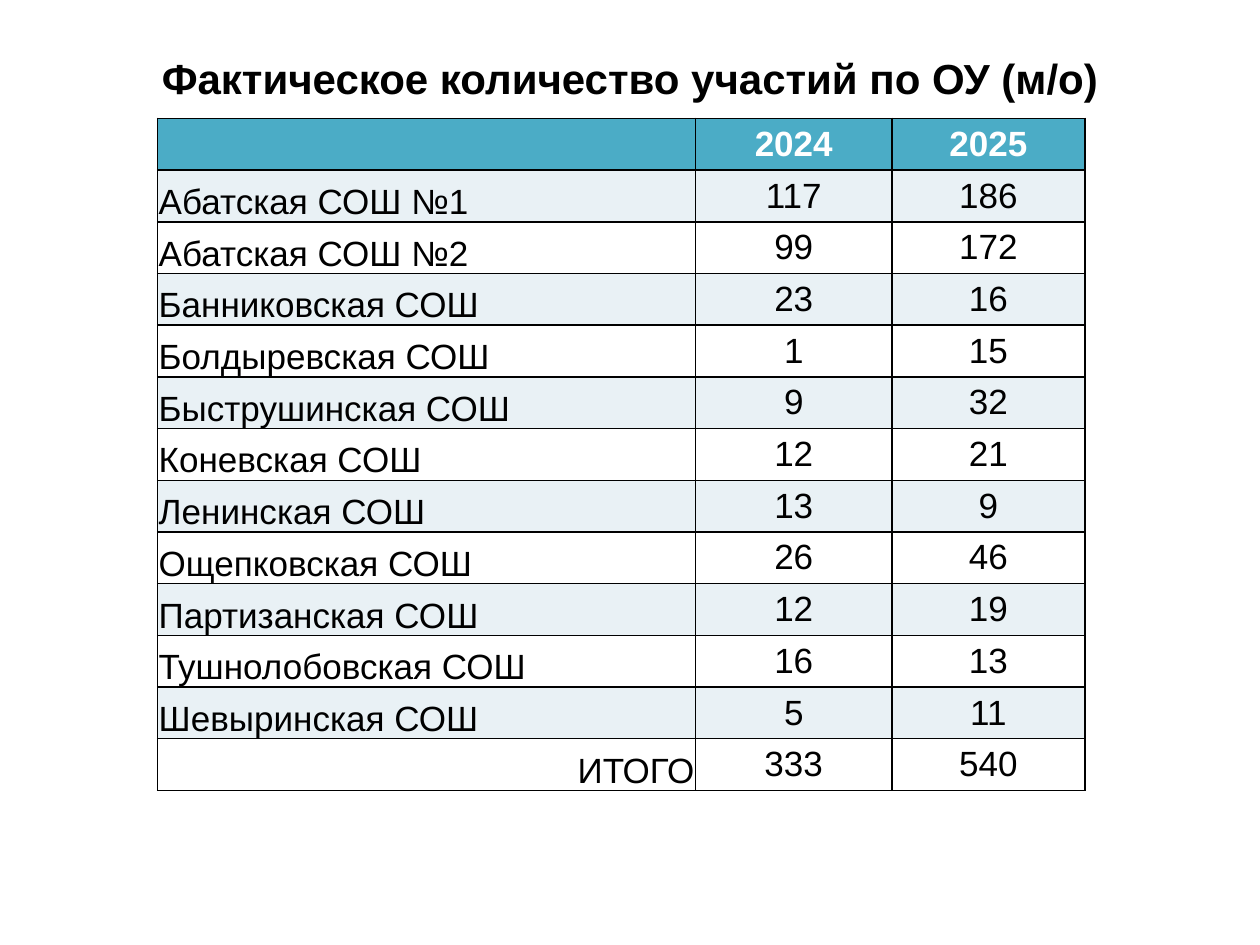
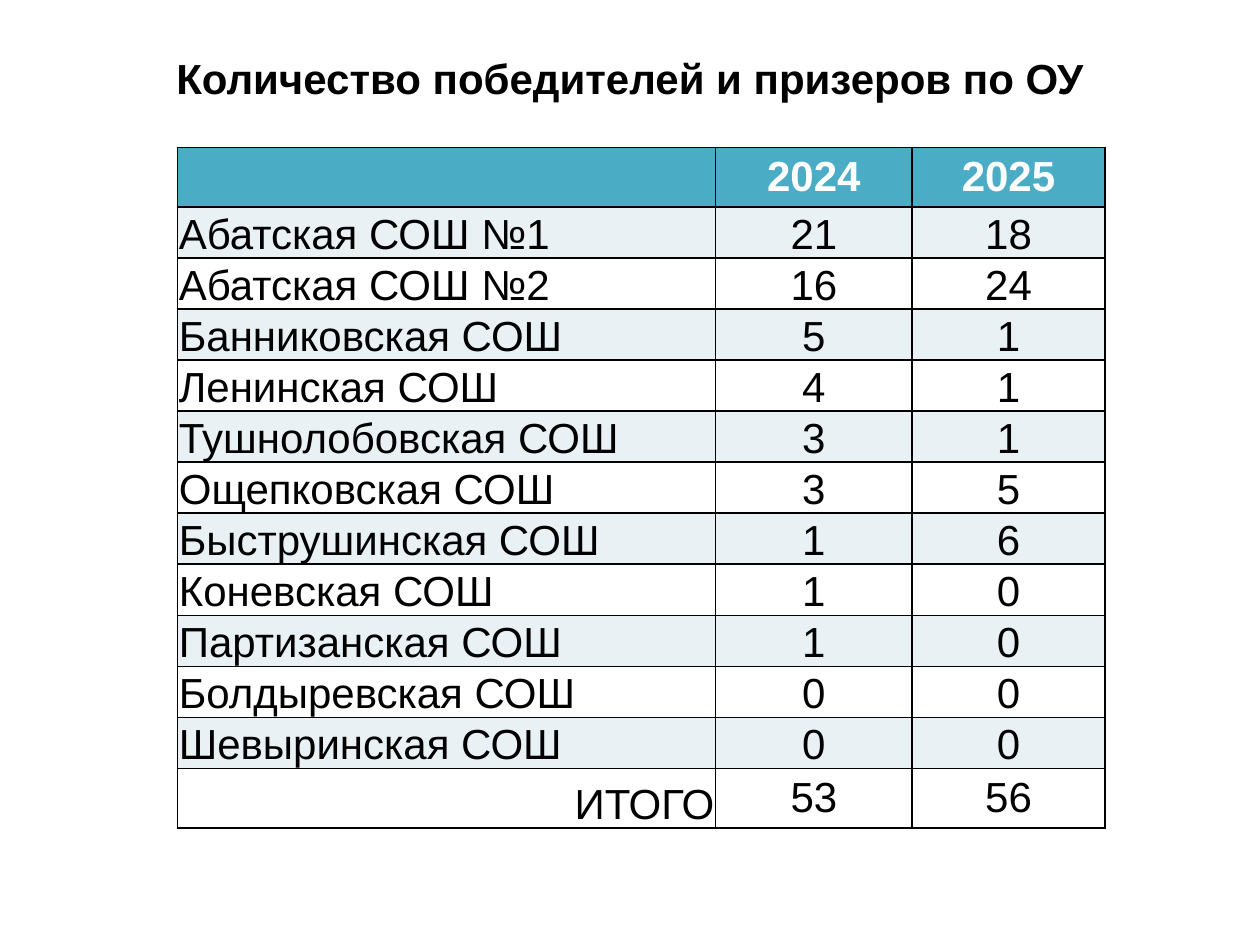
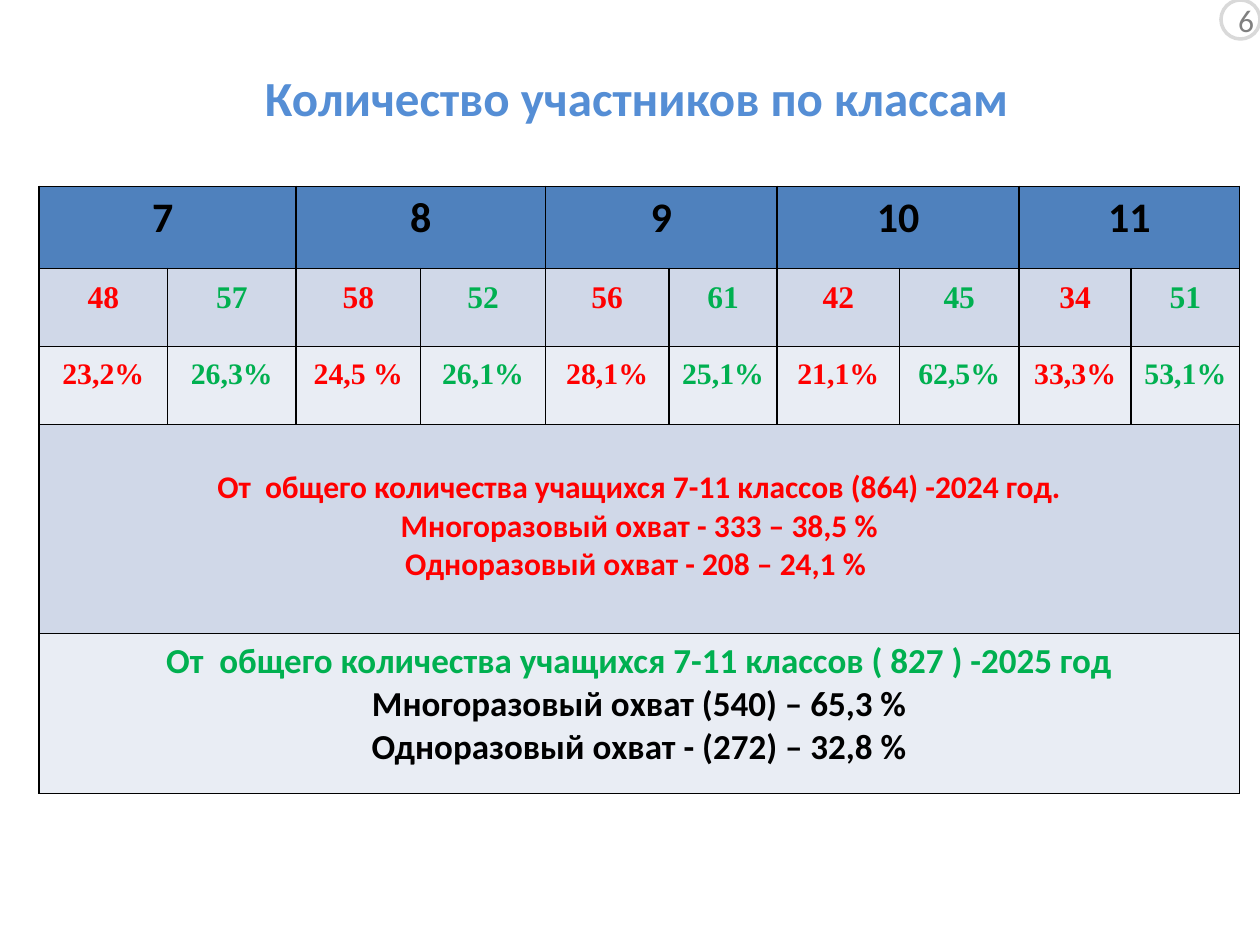
"""Builds three slides of tables on school olympiad participation in 2024 and 2025."""
from lxml import etree
from pptx import Presentation
from pptx.dml.color import RGBColor
from pptx.enum.shapes import MSO_SHAPE
from pptx.enum.text import MSO_ANCHOR, MSO_AUTO_SIZE, PP_ALIGN
from pptx.oxml.ns import qn
from pptx.util import Inches, Pt

LEFT, CENTER, RIGHT = PP_ALIGN.LEFT, PP_ALIGN.CENTER, PP_ALIGN.RIGHT
MIDDLE, BOTTOM = MSO_ANCHOR.MIDDLE, MSO_ANCHOR.BOTTOM
NO_AUTOFIT = MSO_AUTO_SIZE.NONE
OVAL = MSO_SHAPE.OVAL

BLACK = RGBColor(0x00, 0x00, 0x00)
WHITE = RGBColor(0xFF, 0xFF, 0xFF)
TEAL = RGBColor(0x4B, 0xAC, 0xC6)
PALE_TEAL = RGBColor(0xE9, 0xF1, 0xF5)
BLUE = RGBColor(0x4F, 0x81, 0xBD)
TITLE_BLUE = RGBColor(0x55, 0x8E, 0xD5)
BAND_BLUE = RGBColor(0xD0, 0xD8, 0xE8)
PALE_BLUE = RGBColor(0xE9, 0xED, 0xF4)
RED = RGBColor(0xFF, 0x00, 0x00)
GREEN = RGBColor(0x00, 0xB0, 0x50)
GRAY = RGBColor(0x80, 0x80, 0x80)
LIGHT_GRAY = RGBColor(0xD9, 0xD9, 0xD9)


def write_text(paragraph, text, size, font_name, color, bold=True, alignment=CENTER):
    paragraph.alignment = alignment
    run = paragraph.add_run()
    run.text = text
    run.font.size = Pt(size)
    run.font.name = font_name
    run.font.color.rgb = color
    run.font.bold = bold


def style_cell(cell, fill_color):
    properties = cell._tc.get_or_add_tcPr()
    for side in ("a:lnL", "a:lnR", "a:lnT", "a:lnB"):
        border = etree.SubElement(properties, qn(side), w=str(Pt(1)))
        border_fill = etree.SubElement(border, qn("a:solidFill"))
        etree.SubElement(border_fill, qn("a:srgbClr"), val=str(BLACK))
    cell.fill.solid()
    cell.fill.fore_color.rgb = fill_color


presentation = Presentation()
presentation.slide_width = Inches(10)
presentation.slide_height = Inches(7.5)

titles = [
    ("Фактическое количество участий по ОУ (м/о)", 0.5, 0.3, 0.64, 24, "Arial", BLACK),
    ("Количество победителей и призеров по ОУ", 0.5, 0.3, 0.64, 24, "Arial", BLACK),
    ("Количество участников по классам", 0.55, 0.62, 0.3, 28, "Calibri", TITLE_BLUE),
]
for text, left, top, height, size, font_name, color in titles:
    slide = presentation.slides.add_slide(presentation.slide_layouts[5])
    title = slide.shapes.title
    title.left, title.top = Inches(left), Inches(top)
    title.width, title.height = Inches(9), Inches(height)
    title.text_frame.auto_size = NO_AUTOFIT
    title.text_frame.vertical_anchor = MIDDLE
    write_text(title.text_frame.paragraphs[0], text, size, font_name, color)

participations = [
    ("", "2024", "2025"),
    ("Абатская СОШ №1", "117", "186"),
    ("Абатская СОШ №2", "99", "172"),
    ("Банниковская СОШ", "23", "16"),
    ("Болдыревская СОШ", "1", "15"),
    ("Быструшинская СОШ", "9", "32"),
    ("Коневская СОШ", "12", "21"),
    ("Ленинская СОШ", "13", "9"),
    ("Ощепковская СОШ", "26", "46"),
    ("Партизанская СОШ", "12", "19"),
    ("Тушнолобовская СОШ", "16", "13"),
    ("Шевыринская СОШ", "5", "11"),
    ("ИТОГО", "333", "540"),
]
winners = [
    ("", "2024", "2025"),
    ("Абатская СОШ №1", "21", "18"),
    ("Абатская СОШ №2", "16", "24"),
    ("Банниковская СОШ", "5", "1"),
    ("Ленинская СОШ", "4", "1"),
    ("Тушнолобовская СОШ", "3", "1"),
    ("Ощепковская СОШ", "3", "5"),
    ("Быструшинская СОШ", "1", "6"),
    ("Коневская СОШ", "1", "0"),
    ("Партизанская СОШ", "1", "0"),
    ("Болдыревская СОШ", "0", "0"),
    ("Шевыринская СОШ", "0", "0"),
    ("ИТОГО", "53", "56"),
]
school_tables = [
    (participations, 1.25, 0.94, 5.33, 0.41, 20, False),
    (winners, 1.41, 1.17, 5.4, 0.47, 24, True),
]
for slide, school_table in zip(presentation.slides, school_tables):
    rows, left, top, height, outer_height, size, tight_numbers = school_table
    last_row = len(rows) - 1
    inner_height = (height - 2 * outer_height) / (last_row - 1)
    table = slide.shapes.add_table(
        len(rows), 3, Inches(left), Inches(top), Inches(7.36), Inches(height)
    ).table
    for column, width in zip(table.columns, (4.27, 1.56, 1.53)):
        column.width = Inches(width)
    for row_index, row in enumerate(rows):
        is_header, is_total = row_index == 0, row_index == last_row
        table.rows[row_index].height = Inches(outer_height if is_header or is_total else inner_height)
        band_color = PALE_TEAL if row_index % 2 else WHITE
        for column_index, text in enumerate(row):
            cell = table.cell(row_index, column_index)
            style_cell(cell, TEAL if is_header else band_color)
            is_name = column_index == 0
            if not is_header and (is_name or tight_numbers and not is_total):
                cell.vertical_anchor = BOTTOM
                cell.margin_left = cell.margin_right = cell.margin_top = Inches(0.01)
                cell.margin_bottom = 0
            name_alignment = RIGHT if is_total else LEFT
            if text:
                write_text(cell.text_frame.paragraphs[0], text, size, "Arial",
                           WHITE if is_header else BLACK, is_header,
                           name_alignment if is_name else CENTER)

slide = presentation.slides[2]
column_widths = (1.02, 1.02, 0.99, 0.99, 0.98, 0.86, 0.97, 0.95, 0.89, 0.86)
row_heights = (0.65, 0.62, 0.62, 1.66, 1.27)
row_colors = (BLUE, BAND_BLUE, PALE_BLUE, BAND_BLUE, PALE_BLUE)
table = slide.shapes.add_table(
    len(row_heights), len(column_widths), Inches(0.31), Inches(1.48),
    Inches(sum(column_widths)), Inches(sum(row_heights))
).table
for column, width in zip(table.columns, column_widths):
    column.width = Inches(width)
for row, height, fill_color in zip(table.rows, row_heights, row_colors):
    row.height = Inches(height)
    for cell in row.cells:
        style_cell(cell, fill_color)

for grade_index, grade in enumerate(("7 ", "8", "9", "10", "11")):
    first_column = 2 * grade_index
    cell = table.cell(0, first_column)
    cell.merge(table.cell(0, first_column + 1))
    write_text(cell.text_frame.paragraphs[0], grade, 24, "Calibri", BLACK)

grade_rows = [
    (18, ("48", "57", "58", "52", "56", "61", "42", "45", "34", "51")),
    (17, ("23,2%", "26,3%", "24,5 %", "26,1%", "28,1%",
          "25,1%", "21,1%", "62,5%", "33,3%", "53,1%")),
]
for row_index, (size, values) in enumerate(grade_rows, start=1):
    for column_index, value in enumerate(values):
        paragraph = table.cell(row_index, column_index).text_frame.paragraphs[0]
        paragraph.line_spacing = 1.15
        write_text(paragraph, value, size, "Times New Roman", GREEN if column_index % 2 else RED)

summaries = [
    (18, 0.35, [
        ("От  общего количества учащихся 7-11 классов (864) -2024 год.", RED),
        ("Многоразовый охват - 333 – 38,5 %", RED),
        ("Одноразовый охват - 208 – 24,1 % ", RED),
    ]),
    (20, 0.05, [
        ("От  общего количества учащихся 7-11 классов ( 827 ) -2025 год", GREEN),
        ("Многоразовый охват (540) – 65,3 %", BLACK),
        ("Одноразовый охват - (272) – 32,8 %", BLACK),
    ]),
]
for row_index, (size, top_margin, lines) in enumerate(summaries, start=3):
    cell = table.cell(row_index, 0)
    cell.merge(table.cell(row_index, len(column_widths) - 1))
    cell.margin_top = Inches(top_margin)
    for line_index, (text, color) in enumerate(lines):
        text_frame = cell.text_frame
        paragraph = text_frame.add_paragraph() if line_index else text_frame.paragraphs[0]
        write_text(paragraph, text, size, "Calibri", color)

page_badge = slide.shapes.add_shape(OVAL, Inches(9.69), 0, Inches(0.31), Inches(0.31))
page_badge.shadow.inherit = False
page_badge.fill.background()
page_badge.line.color.rgb = LIGHT_GRAY
page_badge.line.width = Pt(2)
text_frame = page_badge.text_frame
text_frame.word_wrap = False
text_frame.vertical_anchor = MIDDLE
text_frame.margin_left = Inches(0.09)
text_frame.margin_right = text_frame.margin_top = text_frame.margin_bottom = 0
write_text(text_frame.paragraphs[0], "6", 18, "Calibri", GRAY, bold=False)

presentation.save("out.pptx")
